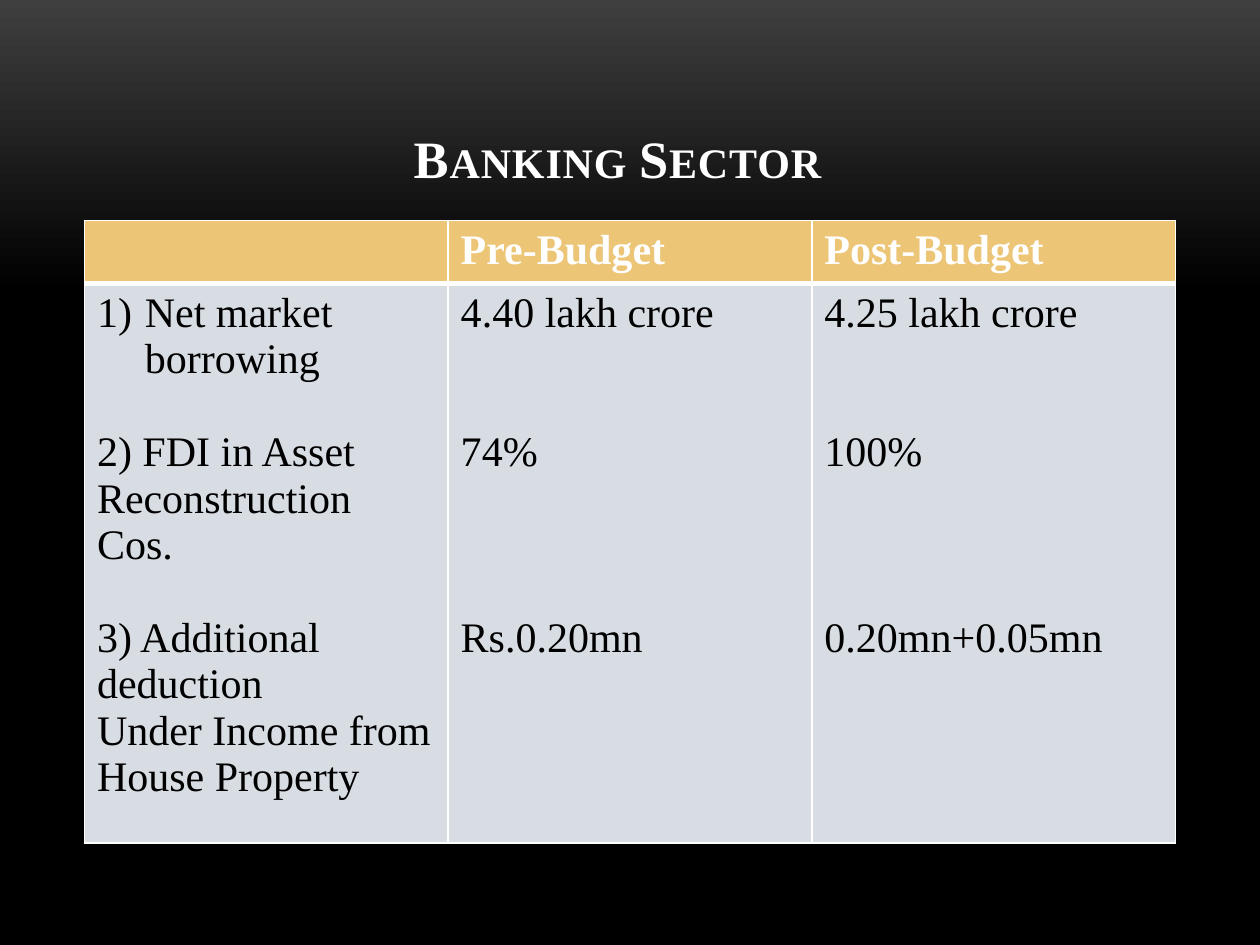
from lxml import etree
from pptx import Presentation
from pptx.dml.color import RGBColor
from pptx.enum.text import MSO_ANCHOR, PP_ALIGN
from pptx.oxml.ns import qn
from pptx.util import Inches, Pt

CENTER = PP_ALIGN.CENTER
BOTTOM = MSO_ANCHOR.BOTTOM

# Content: each body line is (blank lines above, text)
TITLE = "Banking Sector "
HEADERS = ["", "Pre-Budget", "Post-Budget"]
BODY = [
    [(0, "Net market borrowing"), (1, "2) FDI in Asset"),
     (0, "Reconstruction Cos."), (1, "3) Additional deduction"),
     (0, "Under Income from"), (0, "House Property")],
    [(0, "4.40 lakh crore"), (2, "74%"), (3, "Rs.0.20mn")],
    [(0, "4.25 lakh crore"), (2, "100%"), (3, "0.20mn+0.05mn")],
]

COLORS = {"glow": "3F3F3F", "black": "000000", "white": "FFFFFF",
          "gold": "ECC577", "grey": "D8DDE3"}
FONT = "Times New Roman"
TEXT_SIZE = 24
LINE = 26.57          # height of one text line, points
PADDING = 7.2         # top and bottom cell margins together, points
BODY_LINES = 11
WIDTH, HEIGHT = Inches(10), Inches(7.5)
MARGIN = Inches(0.67)
CONTENT_WIDTH = WIDTH - 2 * MARGIN


def color(name):
    return RGBColor.from_string(COLORS[name])


def style(para, size, name, bold):
    for span in para.runs:
        span.font.name = FONT
        span.font.size = Pt(size)
        span.font.bold = bold
        span.font.color.rgb = color(name)


def paint_cell(cell, fill, bottom):
    """White borders first, then the fill, as the schema orders them."""
    props = cell._tc.get_or_add_tcPr()
    for side, width in (("L", 1), ("R", 1), ("T", 1), ("B", bottom)):
        line = etree.SubElement(props, qn(f"a:ln{side}"), w=str(Pt(width)))
        solid = etree.SubElement(line, qn("a:solidFill"))
        etree.SubElement(solid, qn("a:srgbClr"), val=COLORS["white"])
    cell.fill.solid()
    cell.fill.fore_color.rgb = color(fill)


def number_paragraph(para):
    props = para._p.get_or_add_pPr()
    props.set("marL", str(Inches(0.38)))
    props.set("indent", str(-Inches(0.38)))
    etree.SubElement(props, qn("a:buAutoNum"), type="arabicParenR")


deck = Presentation()
deck.slide_width, deck.slide_height = WIDTH, HEIGHT
page = deck.slides.add_slide(deck.slide_layouts[6])

# Background: dark glow fading to black from the top
backdrop = page.background.fill
backdrop.gradient()
backdrop.gradient_angle = 270
for stop, (position, name) in zip(backdrop.gradient_stops,
                                  [(0, "glow"), (0.31, "black")]):
    stop.position = position
    stop.color.rgb = color(name)

# Title in small capitals
box = page.shapes.add_textbox(MARGIN, Inches(0.3), CONTENT_WIDTH, Inches(1.25))
frame = box.text_frame
frame.word_wrap = True
frame.vertical_anchor = BOTTOM
frame.text = TITLE
heading = frame.paragraphs[0]
heading.alignment = CENTER
style(heading, 30, "white", True)
heading_props = heading.runs[0].font._element
heading_props.set("cap", "small")
heading_props.set("spc", "50")

# Table
row_heights = [Pt(LINE + PADDING), Pt(BODY_LINES * LINE + PADDING)]
table = page.shapes.add_table(2, len(HEADERS), MARGIN, Inches(1.75),
                              CONTENT_WIDTH, sum(row_heights)).table
for row, height in zip(table.rows, row_heights):
    row.height = height

for index, (header, lines) in enumerate(zip(HEADERS, BODY)):
    table.columns[index].width = CONTENT_WIDTH // len(HEADERS)
    top, body = table.cell(0, index), table.cell(1, index)
    paint_cell(top, "gold", 3)
    paint_cell(body, "grey", 1)
    if header:
        top.text_frame.text = header
        style(top.text_frame.paragraphs[0], TEXT_SIZE, "white", True)
    body.text_frame.text = "\n".join(text for _, text in lines)
    for para, (blanks, _) in zip(body.text_frame.paragraphs, lines):
        if blanks:
            para.space_before = Pt(blanks * LINE)
        style(para, TEXT_SIZE, "black", False)

number_paragraph(table.cell(1, 0).text_frame.paragraphs[0])

deck.save("out.pptx")
